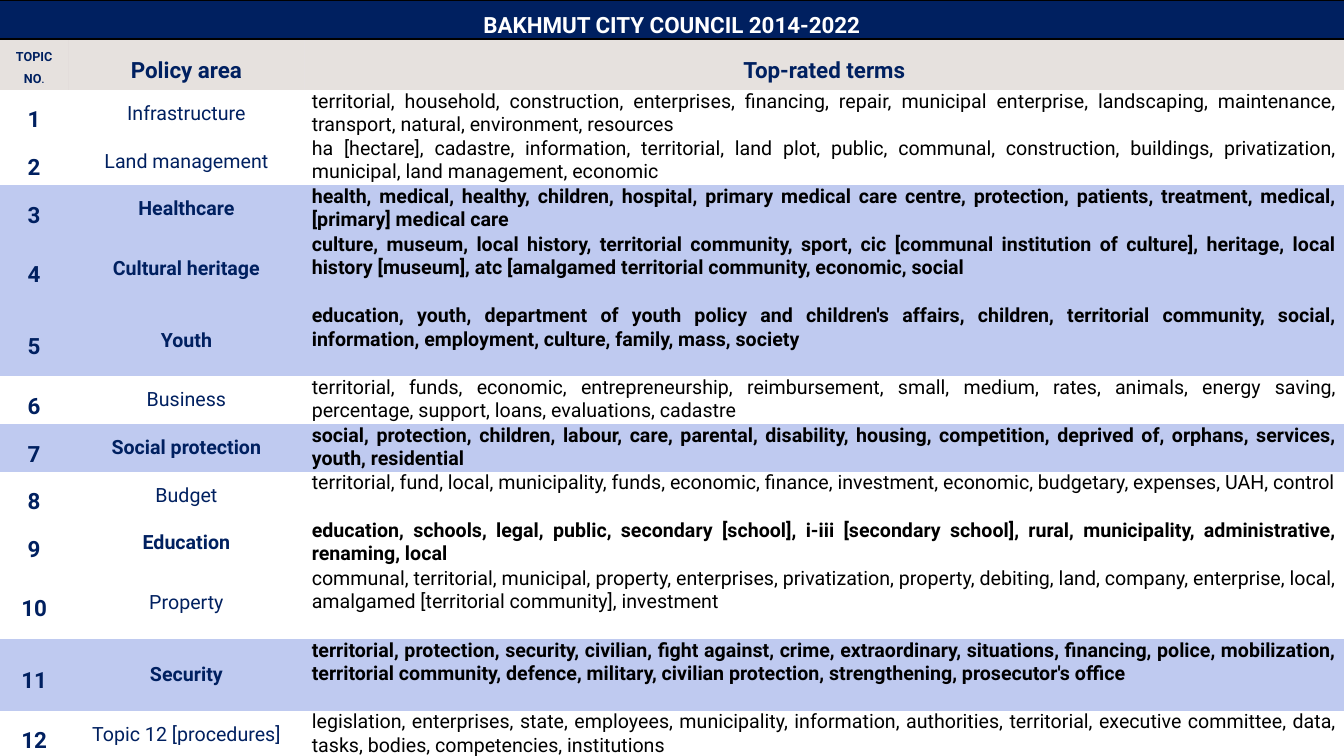
from lxml.etree import SubElement
from pptx import Presentation
from pptx.dml.color import RGBColor
from pptx.enum.text import MSO_ANCHOR as Anchor, PP_ALIGN as Align
from pptx.oxml.ns import qn
from pptx.util import Cm, Pt

NAVY, BLACK, WHITE, LILAC, TAUPE = "002060", "000000", "FFFFFF", "BFCAF0", "82695E"
PLAIN_STYLE = "{2D5ABB26-0587-4C30-8999-92F81FD0307C}"
COLUMNS = (1.72, 5.96, 26.19)
TITLE_HEIGHT, HEADING_HEIGHT, SHORT, TALL = 0.89, 1.28, 1.2, 1.81
HEADINGS = (
    (("TOPIC NO", 9), (".", 7)),
    (("Policy area", 16),),
    (("Top-rated terms", 16),),
)
TOPICS = (
    ("Infrastructure", SHORT, False, None,
     "territorial, household, construction, enterprises, financing, repair, municipal enterprise, "
     "landscaping, maintenance, transport, natural, environment, resources"),
    ("Land management", SHORT, False, None,
     "ha [hectare], cadastre, information, territorial, land plot, public, communal, construction, "
     "buildings, privatization, municipal, land management, economic"),
    ("Healthcare", SHORT, True, LILAC,
     "health, medical, healthy, children, hospital, primary medical care centre, protection, "
     "patients, treatment, medical, [primary] medical care"),
    ("Cultural heritage", TALL, True, LILAC,
     "culture, museum, local history, territorial community, sport, cic [communal institution of "
     "culture], heritage, local history [museum], atc [amalgamed territorial community, economic, social"),
    ("Youth", TALL, True, LILAC,
     "education, youth, department of youth policy and children's affairs, children, territorial "
     "community, social, information, employment, culture, family, mass, society"),
    ("Business", SHORT, False, None,
     "territorial, funds, economic, entrepreneurship, reimbursement, small, medium, rates, animals, "
     "energy saving, percentage, support, loans, evaluations, cadastre"),
    ("Social protection", SHORT, True, LILAC,
     "social, protection, children, labour, care, parental, disability, housing, competition, "
     "deprived of, orphans, services, youth, residential"),
    ("Budget", SHORT, False, None,
     "territorial, fund, local, municipality, funds, economic, finance, investment, economic, "
     "budgetary, expenses, UAH, control"),
    ("Education", SHORT, True, None,
     "education, schools, legal, public, secondary [school], i-iii [secondary school], rural, "
     "municipality, administrative, renaming, local"),
    ("Property", TALL, False, None,
     "communal, territorial, municipal, property, enterprises, privatization, property, debiting, "
     "land, company, enterprise, local, amalgamed [territorial community], investment"),
    ("Security", TALL, True, LILAC,
     "territorial, protection, security, civilian, fight against, crime, extraordinary, situations, "
     "financing, police, mobilization, territorial community, defence, military, civilian "
     "protection, strengthening, prosecutor's office"),
    ("Topic 12 [procedures]", SHORT, False, None,
     "legislation, enterprises, state, employees, municipality, information, authorities, "
     "territorial, executive committee, data, tasks, bodies, competencies, institutions"),
)


def colour(value):
    """Turn a hex string into a colour."""
    return RGBColor.from_string(value)


def rule_row(row, sides):
    """Draw a thin black border on the given sides of every cell in a row."""
    for cell in row.cells:
        for side in sides:
            line = SubElement(cell._tc.get_or_add_tcPr(), qn(f"a:ln{side}"), w=str(Pt(1)))
            SubElement(SubElement(line, qn("a:solidFill")), qn("a:srgbClr"), val=BLACK)


def fill_cell(cell, value, opacity=None):
    """Fill a cell, or leave it clear when there is no colour."""
    if value is None:
        cell.fill.background()
        return
    cell.fill.solid()
    cell.fill.fore_color.rgb = colour(value)
    if opacity:
        tint = cell._tc.tcPr.find(f"{qn('a:solidFill')}/{qn('a:srgbClr')}")
        SubElement(tint, qn("a:alpha"), val=str(opacity * 1000))


def write_cell(cell, spans, ink=NAVY, bold=True, align=Align.CENTER, spacing=None, anchor=Anchor.MIDDLE):
    """Write sized runs into one paragraph of a cell."""
    cell.margin_left = cell.margin_right = Cm(0.18)
    cell.margin_top = cell.margin_bottom = 0
    cell.vertical_anchor = anchor
    para = cell.text_frame.paragraphs[0]
    para.alignment = align
    para.line_spacing = spacing
    for text, size in spans:
        span = para.add_run()
        span.text = text
        span.font.name = "Roboto"
        span.font.size = Pt(size)
        span.font.bold = bold
        span.font.color.rgb = colour(ink)


def add_title_row(row):
    """Merge the first row into a navy title band."""
    rule_row(row, "TB")
    first, *_, last = row.cells
    first.merge(last)
    fill_cell(first, NAVY)
    write_cell(first, [("BAKHMUT CITY COUNCIL 2014-2022", 16)], WHITE, spacing=1.5, anchor=Anchor.TOP)


def add_heading_row(row):
    """Write the column headings on a pale band."""
    for cell, spans in zip(row.cells, HEADINGS):
        fill_cell(cell, TAUPE, 20)
        write_cell(cell, spans, spacing=1.5)


def add_topic_row(row, number, area, bold, fill, terms):
    """Write one topic: its number, policy area and terms."""
    for cell in row.cells:
        fill_cell(cell, fill)
    number_cell, area_cell, terms_cell = row.cells
    write_cell(number_cell, [(str(number), 16)], spacing=1.5)
    write_cell(area_cell, [(area, 14)], bold=bold)
    write_cell(terms_cell, [(terms, 14)], BLACK, bold, Align.JUSTIFY, anchor=Anchor.TOP)


def add_topic_table(page, left, top, width, height):
    """Place the topic table in the given box."""
    frame = page.shapes.add_table(len(TOPICS) + 2, len(COLUMNS), left, top, width, height)
    table = frame.table
    table.first_row = table.horz_banding = False
    table._tbl.tblPr.find(qn("a:tableStyleId")).text = PLAIN_STYLE
    for column, share in zip(table.columns, COLUMNS):
        column.width = int(width * share / sum(COLUMNS))
    title_row, heading_row, *topic_rows = table.rows
    title_row.height, heading_row.height = Cm(TITLE_HEIGHT), Cm(HEADING_HEIGHT)
    add_title_row(title_row)
    add_heading_row(heading_row)
    rule_row(topic_rows[-1], "B")
    for number, (row, topic) in enumerate(zip(topic_rows, TOPICS), 1):
        area, row_height, bold, fill, terms = topic
        row.height = Cm(row_height)
        add_topic_row(row, number, area, bold, fill, terms)


def main():
    """Build the deck and save it."""
    deck = Presentation()
    deck.slide_width, deck.slide_height = Cm(33.87), Cm(19.05)
    page = deck.slides.add_slide(deck.slide_layouts[6])
    add_topic_table(page, 0, 0, deck.slide_width, deck.slide_height)
    deck.save("out.pptx")


if __name__ == "__main__":
    main()
